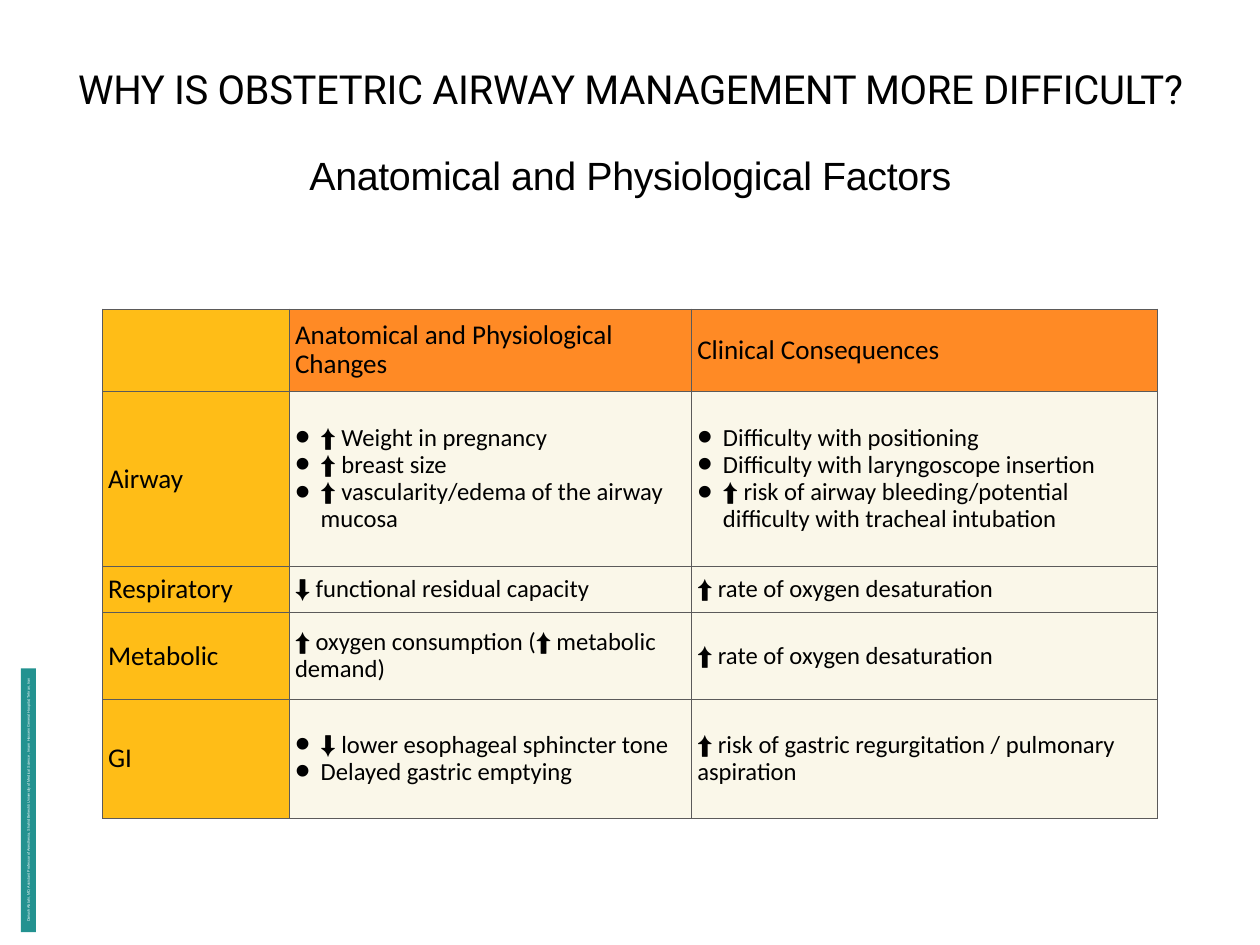
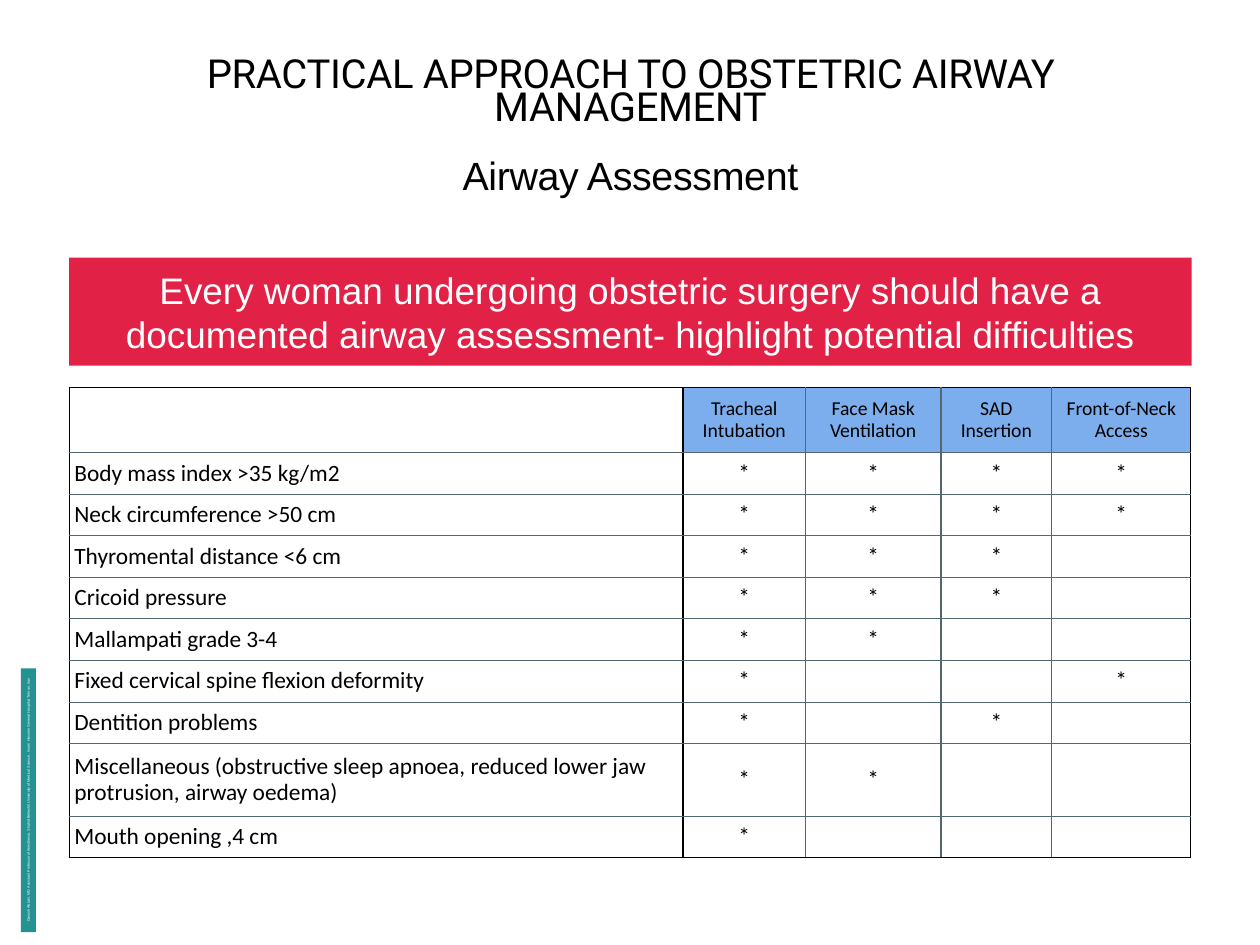
from lxml.etree import SubElement
from pptx import Presentation
from pptx.dml.color import RGBColor
from pptx.enum.shapes import MSO_SHAPE
from pptx.enum.text import MSO_ANCHOR, PP_ALIGN
from pptx.oxml.ns import qn
from pptx.util import Inches, Pt

BLACK = RGBColor(0x00, 0x00, 0x00)
WHITE = RGBColor(0xFF, 0xFF, 0xFF)
TEAL = RGBColor(0x23, 0x92, 0x90)
RED = RGBColor(0xE2, 0x21, 0x46)
ORANGE = RGBColor(0xFF, 0x8A, 0x25)
YELLOW = RGBColor(0xFF, 0xBD, 0x17)
CREAM = RGBColor(0xFA, 0xF7, 0xE9)
BLUE = RGBColor(0x7C, 0xAD, 0xED)
GREY = RGBColor(0x5B, 0x5A, 0x5A)
SLATE = RGBColor(0x53, 0x67, 0x73)
PAD = Inches(0.06)
LEFT, WIDTH = Inches(0.78), Inches(12.67)


def write_text(frame, lines, size, face="Arial", color=BLACK, align=PP_ALIGN.CENTER,
               spacing=None, tracking=None, bulleted=False):
    for index, line in enumerate(lines):
        paragraph = frame.paragraphs[0] if index == 0 else frame.add_paragraph()
        paragraph.text = line
        paragraph.alignment = align
        paragraph.line_spacing = spacing
        if bulleted:
            properties = paragraph._p.get_or_add_pPr()
            properties.set("marL", str(Inches(0.29)))
            properties.set("indent", str(-Inches(0.29)))
            SubElement(properties, qn("a:buSzPct"), val="175000")
            SubElement(properties, qn("a:buFont"), typeface="Arial")
            SubElement(properties, qn("a:buChar"), char="•")
        paragraph.font.size = Pt(size)
        paragraph.font.name = face
        paragraph.font.color.rgb = color
        if tracking:
            paragraph.font._element.set("spc", str(tracking))


def fill_cell(cell, lines, size, align, fill, borders):
    cell.margin_left = cell.margin_right = cell.margin_top = cell.margin_bottom = PAD
    cell.vertical_anchor = MSO_ANCHOR.MIDDLE
    write_text(cell.text_frame, lines, size, "Calibri", align=align, spacing=0.9,
               bulleted=len(lines) > 1)
    properties = cell._tc.get_or_add_tcPr()
    for side, (color, weight) in zip("LRTB", borders):
        edge = SubElement(properties, qn(f"a:ln{side}"), w=str(Pt(weight)))
        SubElement(SubElement(edge, qn("a:solidFill")), qn("a:srgbClr"), val=str(color))
    if fill is None:
        cell.fill.background()
    else:
        cell.fill.solid()
        cell.fill.fore_color.rgb = fill


deck = Presentation()
deck.slide_width, deck.slide_height = Inches(14.22), Inches(10.67)

AUTHOR = ("Dariush Abtahi, MD, Assistant Professor of Anesthesia, Shahid Beheshti University "
          "of Medical Science , Imam Hossein General Hospital, Tehran, Iran")

factor_rows = [
    [[""], ["Anatomical and Physiological Changes"], ["Clinical Consequences"]],
    [["Airway"],
     ["⬆︎ Weight in pregnancy", "⬆︎ breast size", "⬆︎ vascularity/edema of the airway mucosa"],
     ["Difficulty with positioning", "Difficulty with laryngoscope insertion",
      "⬆︎ risk of airway bleeding/potential difficulty with tracheal intubation"]],
    [["Respiratory"], ["⬇︎ functional residual capacity"], ["⬆︎ rate of oxygen desaturation"]],
    [["Metabolic"], ["⬆︎ oxygen consumption (⬆︎ metabolic demand)"],
     ["⬆︎ rate of oxygen desaturation"]],
    [["GI"], ["⬇︎ lower esophageal sphincter tone", "Delayed gastric emptying"],
     ["⬆︎ risk of gastric regurgitation / pulmonary aspiration"]],
]
findings = [
    ("Body mass index >35 kg/m2", "****"),
    ("Neck circumference >50 cm", "****"),
    ("Thyromental distance <6 cm", "***-"),
    ("Cricoid pressure", "***-"),
    ("Mallampati grade 3-4", "**--"),
    ("Fixed cervical spine flexion deformity", "*--*"),
    ("Dentition problems", "*-*-"),
    ("Miscellaneous (obstructive sleep apnoea, reduced lower jaw protrusion, airway oedema)",
     "**--"),
    ("Mouth opening ,4 cm", "*---"),
]
techniques = ["", "Tracheal Intubation", "Face Mask Ventilation", "SAD Insertion",
              "Front-of-Neck Access"]
assessment_rows = [[[name] for name in techniques]] + [
    [[finding]] + [[mark.replace("-", "")] for mark in marks] for finding, marks in findings]

topics = [
    ("WHY IS OBSTETRIC AIRWAY MANAGEMENT MORE DIFFICULT?", "Anatomical and Physiological Factors",
     factor_rows, 1.16, 3.49, [2.11, 4.54, 5.25], [0.93, 1.98, 0.52, 0.98, 1.34]),
    ("PRACTICAL APPROACH TO OBSTETRIC AIRWAY MANAGEMENT", "Airway Assessment",
     assessment_rows, 0.78, 4.38, [6.93, 1.38, 1.53, 1.25, 1.57],
     [0.73] + [0.47] * 7 + [0.82, 0.47]),
]
slides, grids = [], []
for title, subtitle, rows, left, top, widths, heights in topics:
    slide = deck.slides.add_slide(deck.slide_layouts[6])
    slides.append(slide)

    credit = slide.shapes.add_shape(MSO_SHAPE.RECTANGLE, Inches(-1.17), Inches(8.95),
                                    Inches(2.98), Inches(0.17))
    credit.rotation = 270
    credit.shadow.inherit = False
    credit.fill.solid()
    credit.fill.fore_color.rgb = TEAL
    credit.line.fill.background()
    credit.text_frame.word_wrap = False
    credit.text_frame.vertical_anchor = MSO_ANCHOR.MIDDLE
    write_text(credit.text_frame, [AUTHOR], 3, color=WHITE)

    for text, y, height, anchor, size, face, spacing in [
        (title, 0.43, 1.28, MSO_ANCHOR.MIDDLE, 32.5, "Roboto", 0.7),
        (subtitle, 1.65, 0.69, MSO_ANCHOR.TOP, 32, "Arial", None),
    ]:
        heading = slide.shapes.add_textbox(LEFT, Inches(y), WIDTH, Inches(height)).text_frame
        heading.word_wrap = True
        heading.vertical_anchor = anchor
        heading.margin_left = heading.margin_right = PAD
        heading.margin_top = heading.margin_bottom = PAD
        write_text(heading, [text], size, face, spacing=spacing, tracking=-30)

    grid = slide.shapes.add_table(len(rows), len(widths), Inches(left), Inches(top),
                                  Inches(sum(widths)), Inches(sum(heights))).table
    grid.first_row = grid.horz_banding = False
    for column, width in zip(grid.columns, widths):
        column.width = Inches(width)
    for row, height in zip(grid.rows, heights):
        row.height = Inches(height)
    grids.append(grid)

factors, assessment = grids

for r, row in enumerate(factor_rows):
    for c, lines in enumerate(row):
        fill = YELLOW if c == 0 else ORANGE if r == 0 else CREAM
        size = 22 if r == 0 or c == 0 else 20
        fill_cell(factors.cell(r, c), lines, size, PP_ALIGN.LEFT, fill, [(GREY, 1)] * 4)

banner = slides[1].shapes.add_shape(MSO_SHAPE.RECTANGLE, LEFT, Inches(2.91), WIDTH, Inches(1.22))
banner.shadow.inherit = False
banner.fill.solid()
banner.fill.fore_color.rgb = RED
banner.line.fill.background()
banner.text_frame.margin_left = banner.text_frame.margin_right = PAD
banner.text_frame.vertical_anchor = MSO_ANCHOR.MIDDLE
write_text(banner.text_frame, ["Every woman undergoing obstetric surgery should have a documented "
                               "airway assessment- highlight potential difficulties"],
           30, color=WHITE)

inner, outer, divider = (SLATE, 1), (BLACK, 1), (BLACK, 2)
last_row, last_column = len(assessment_rows) - 1, len(techniques) - 1
for r, row in enumerate(assessment_rows):
    for c, lines in enumerate(row):
        borders = [
            outer if c == 0 else divider if c == 1 else inner,
            divider if c == 0 else outer if c == last_column else inner,
            outer if r == 0 else inner,
            outer if r == last_row else inner,
        ]
        fill_cell(assessment.cell(r, c), lines, 16 if r == 0 else 19,
                  PP_ALIGN.LEFT if c == 0 else PP_ALIGN.CENTER,
                  BLUE if r == 0 and c > 0 else None, borders)

deck.save("out.pptx")
